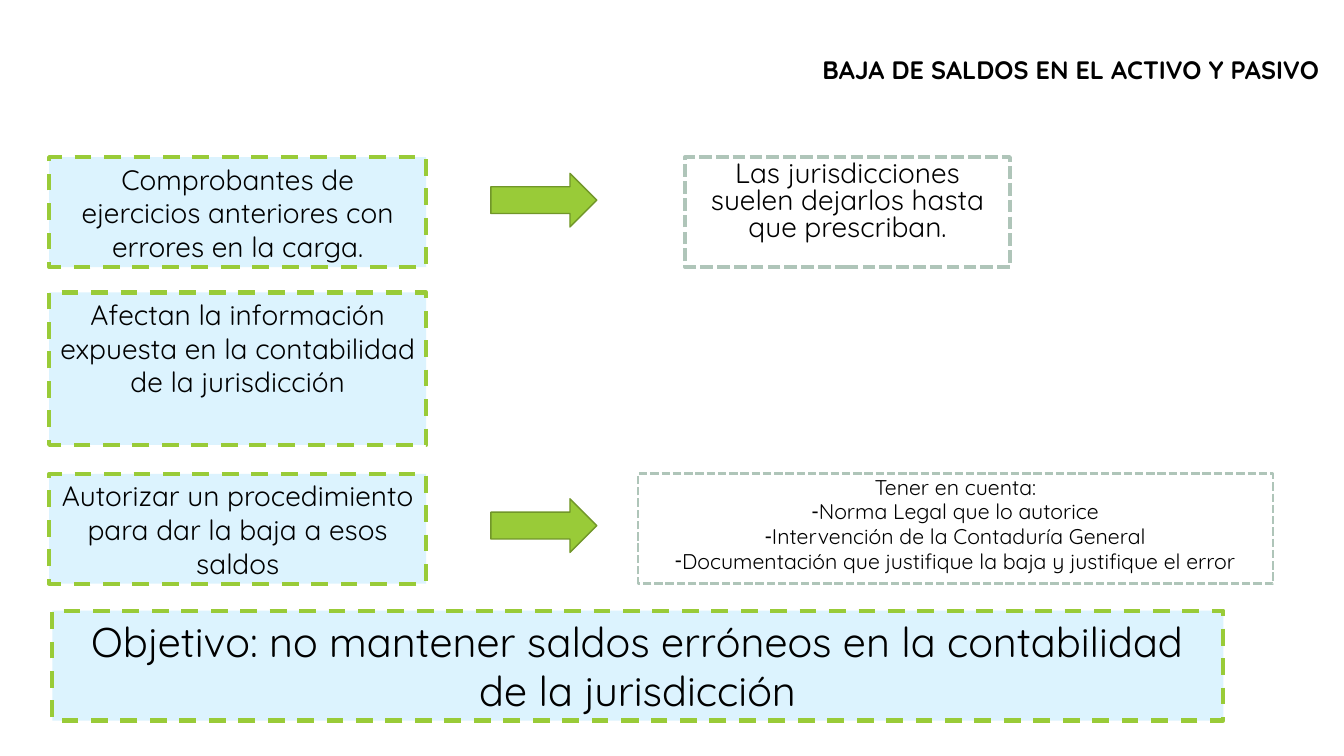
from dataclasses import dataclass

from lxml import etree
from pptx import Presentation
from pptx import util as u
from pptx.dml.color import RGBColor
from pptx.enum import dml, shapes, text
from pptx.oxml import ns


@dataclass(frozen=True)
class Theme:
    font: str = "Quicksand"
    ink: str = "000000"
    sky: str = "DCF3FE"
    paper: str = "FFFFFF"
    green: str = "99CB38"
    dark_green: str = "719629"
    sage: str = "AFC5B9"
    title_size: float = 18
    box_size: float = 20
    list_size: float = 15.2
    goal_size: float = 29.6


THEME = Theme()
DASH = dml.MSO_LINE.DASH
SHORT_DASH = dml.MSO_LINE.SQUARE_DOT  # sysDash is set through SHORT_DASH below
SHORT_DASH = dml.MSO_LINE.SQUARE_DOT if not hasattr(dml.MSO_LINE, "SYS_DASH") else dml.MSO_LINE.SYS_DASH


def place(shape, box):
    shape.left, shape.top, shape.width, shape.height = (u.Cm(length) for length in box)


def paint(shape, fill, line, width, dash=None):
    shape.fill.solid()
    shape.fill.fore_color.rgb = RGBColor.from_string(fill)
    shape.line.color.rgb = RGBColor.from_string(line)
    shape.line.width = u.Pt(width)
    if dash:
        shape.line.dash_style = dash


def set_bullet(paragraph, character):
    properties = paragraph._p.get_or_add_pPr()
    properties.set("marL", "0")
    properties.set("indent", "0")
    if character:
        etree.SubElement(properties, ns.qn("a:buChar")).set("char", character)
    else:
        etree.SubElement(properties, ns.qn("a:buNone"))


def write(paragraph, words, size, spacing=1.0, bold=False, align=text.PP_ALIGN.CENTER):
    paragraph.alignment = align
    paragraph.line_spacing = spacing
    run = paragraph.add_run()
    run.text = words
    run.font.name = THEME.font
    run.font.size = u.Pt(size)
    run.font.bold = bold
    run.font.color.rgb = RGBColor.from_string(THEME.ink)


def prepare_frame(shape, anchor=text.MSO_ANCHOR.TOP, fit=text.MSO_AUTO_SIZE.NONE):
    frame = shape.text_frame
    frame.word_wrap = True
    frame.auto_size = fit
    frame.vertical_anchor = anchor
    return frame


def add_title(slide, box, words):
    title = slide.shapes.title
    place(title, box)
    frame = prepare_frame(title, text.MSO_ANCHOR.BOTTOM, text.MSO_AUTO_SIZE.SHAPE_TO_FIT_TEXT)
    write(frame.paragraphs[0], words, THEME.title_size, 0.9, True, text.PP_ALIGN.LEFT)


def add_box(slide, box, words, size=THEME.box_size, fill=THEME.sky,
            line=THEME.green, dash=DASH, spacing=1.0):
    shape = slide.shapes.add_shape(shapes.MSO_SHAPE.RECTANGLE, *(u.Cm(n) for n in box))
    shape.shadow.inherit = False
    paint(shape, fill, line, 3, dash)
    write(prepare_frame(shape).paragraphs[0], words, size, spacing)


def add_arrow(slide, box):
    arrow = slide.shapes.add_shape(shapes.MSO_SHAPE.RIGHT_ARROW, *(u.Cm(n) for n in box))
    arrow.shadow.inherit = False
    paint(arrow, THEME.green, THEME.dark_green, 1)


def add_requirements(slide, box, heading, items):
    body = slide.placeholders[1]
    place(body, box)
    paint(body, THEME.paper, THEME.sage, 2, SHORT_DASH)
    frame = prepare_frame(body)
    for number, words in enumerate([heading, *items]):
        paragraph = frame.add_paragraph() if number else frame.paragraphs[0]
        set_bullet(paragraph, "-" if number else None)
        paragraph.space_before = u.Pt(3 if number else 0)
        write(paragraph, words, THEME.list_size, 0.8)


def build_slide(presentation):
    slide = presentation.slides.add_slide(presentation.slide_layouts[1])
    add_title(slide, (20.47, 1.32, 13.34, 0.94), "BAJA DE SALDOS EN EL ACTIVO Y PASIVO")

    # Left column: problem, effect and procedure
    left, width, height = 1.24, 9.5, 2.77
    first_row, second_row, third_row = 3.96, 7.37, 11.94
    steps = [
        (first_row, height, "Comprobantes de ejercicios anteriores con errores en la carga."),
        (second_row, 3.84, "Afectan la información expuesta en la contabilidad de la jurisdicción"),
        (third_row, height, "Autorizar un procedimiento para dar la baja a esos saldos"),
    ]
    for top, step_height, words in steps:
        add_box(slide, (left, top, width, step_height), words)

    # Right column: consequence and requirements
    add_box(slide, (17.27, first_row, 8.18, height),
            "Las jurisdicciones suelen dejarlos hasta que prescriban.",
            fill=THEME.paper, line=THEME.sage, dash=SHORT_DASH, spacing=0.8)
    add_requirements(slide, (16.08, third_row, 16, height), "Tener en cuenta:", [
        "Norma Legal que lo autorice",
        "Intervención de la Contaduría General",
        "Documentación que justifique la baja y justifique el error",
    ])

    # Arrows between the columns
    for top in (first_row + 0.41, third_row + 0.63):
        add_arrow(slide, (12.37, top, 2.67, 1.35))

    # Goal banner
    add_box(slide, (1.32, 15.39, 29.51, height),
            "Objetivo: no mantener saldos erróneos en la contabilidad de la jurisdicción",
            size=THEME.goal_size)


def main():
    presentation = Presentation()
    presentation.slide_width, presentation.slide_height = u.Cm(33.87), u.Cm(19.05)
    build_slide(presentation)
    presentation.save("out.pptx")


if __name__ == "__main__":
    main()
